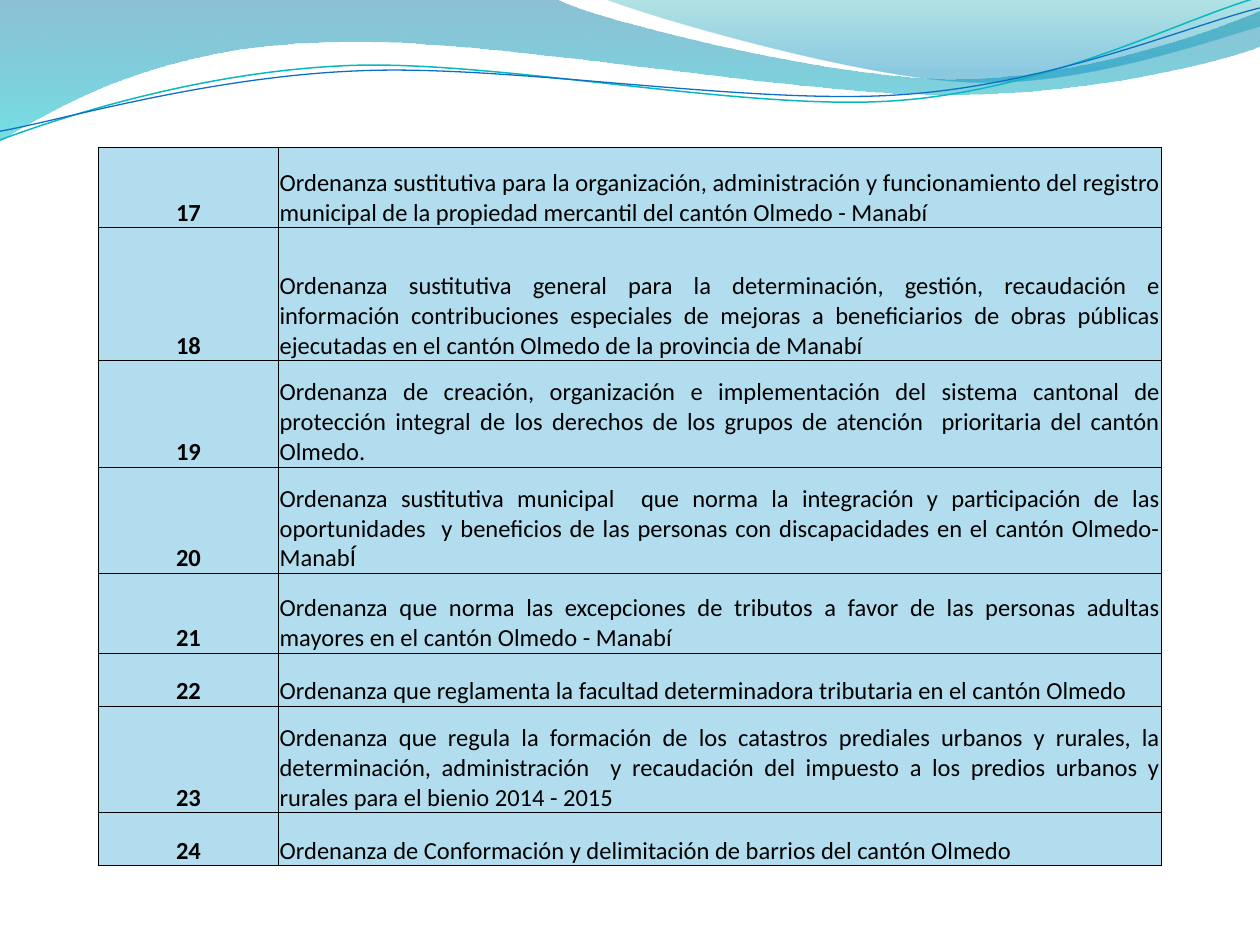
from lxml import etree
from pptx import Presentation
from pptx.dml.color import RGBColor
from pptx.enum import text
from pptx.oxml.ns import qn
from pptx.util import Pt

BLACK = RGBColor(0, 0, 0)
CELL_BLUE = RGBColor(0xB2, 0xDD, 0xEE)
DEEP_BLUE = RGBColor(0x00, 0x74, 0xA1)
CYAN = RGBColor(0x00, 0xC6, 0xCF)
TEAL = RGBColor(0x00, 0xA1, 0xA9)
SKY = RGBColor(0x00, 0x8B, 0xBF)
LINE_TEAL = RGBColor(0x0A, 0xB8, 0xBF)
LINE_BLUE = RGBColor(0x0F, 0x6F, 0xC6)

# Outlines: a start point, then segments of one point (line) or three (Bézier curve).
# Gradient stops: position, colour, opacity in percent.
WAVES = [
    ((0, 0), [
        [(317, -1)],
        [(343, 12), (478, 45), (546, 45)],
        [(614, 45), (690, 19), (720, 6)],
        [(721, 26)],
        [(708, 32), (626, 55), (537, 54)],
        [(447, 54), (275, 20), (185, 24)],
        [(93, 26), (33, 60), (-1, 81)],
        [(0, 0)],
    ], [(0, DEEP_BLUE, 45), (1, CYAN, 55)]),
    ((345, -1), [
        [(366, 8), (491, 45), (554, 47)],
        [(617, 50), (692, 23), (720, 15)],
        [(720, 0)],
        [(345, -1)],
    ], [(0, TEAL, 30), (0.8, SKY, 45)]),
]
STROKE_ROTATION = 357.3
STROKES = [
    ((-1.4, 63), [
        [(34.2, 51.7), (114.3, 29.4), (199.4, 29.9)],
        [(284.4, 30.5), (425.8, 67.2), (512, 64.7)],
        [(599.3, 62.3), (676, 25.9), (720.6, 15.5)],
    ], LINE_TEAL, 0.85),
    ((-1.1, 58), [
        [(33.2, 53.6), (118.2, 32.6), (204.3, 33.2)],
        [(290.4, 33.2), (429.1, 63.8), (515.3, 61.4)],
        [(601.4, 59.4), (679, 30), (721.4, 21.5)],
    ], LINE_BLUE, 0.75),
]

FIRST_NUMBER = 17
ROW_UNIT = 15.2
# Row height in units, text
ORDINANCES = [
    (3, "Ordenanza sustitutiva para la organización, administración y funcionamiento del "
        "registro municipal de la propiedad mercantil del cantón Olmedo - Manabí"),
    (5, "Ordenanza sustitutiva general para la determinación, gestión, recaudación e "
        "información contribuciones especiales de mejoras a beneficiarios de obras públicas "
        "ejecutadas en el cantón Olmedo de la provincia de Manabí"),
    (4, "Ordenanza de creación, organización e implementación del sistema cantonal de "
        "protección integral de los derechos de los grupos de atención  prioritaria del "
        "cantón Olmedo."),
    (4, "Ordenanza sustitutiva municipal  que norma la integración y participación de las "
        "oportunidades  y beneficios de las personas con discapacidades en el cantón "
        "Olmedo-ManabÍ"),
    (3, "Ordenanza que norma las excepciones de tributos a favor de las personas adultas "
        "mayores en el cantón Olmedo - Manabí"),
    (2, "Ordenanza que reglamenta la facultad determinadora tributaria en el cantón Olmedo"),
    (4, "Ordenanza que regula la formación de los catastros prediales urbanos y rurales, la "
        "determinación, administración  y recaudación del impuesto a los predios urbanos y "
        "rurales para el bienio 2014 - 2015"),
    (2, "Ordenanza de Conformación y delimitación de barrios del cantón Olmedo"),
]


def add_outline(slide, left, top, start, segments, close):
    """Draw all points as lines, then join each group of three into one Bézier curve."""
    def place(point):
        return Pt(left + point[0]), Pt(top + point[1])

    builder = slide.shapes.build_freeform(*place(start))
    builder.add_line_segments([place(pt) for seg in segments for pt in seg], close=close)
    sp = builder.convert_to_shape()
    sp.shadow.inherit = False
    lines = iter(list(sp.element.iter(qn("a:lnTo"))))
    for segment in segments:
        first, *others = [next(lines) for _ in segment]
        if others:
            first.tag = qn("a:cubicBezTo")
        for line in others:
            first.append(line[0])
            line.getparent().remove(line)
    return sp


def add_header(slide, left, top):
    for start, segments, stops in WAVES:
        sp = add_outline(slide, left, top, start, segments, close=True)
        sp.line.fill.background()
        sp.fill.gradient()
        sp.fill.gradient_angle = 270
        for stop, (position, color, _) in zip(sp.fill.gradient_stops, stops):
            stop.position = position
            stop.color.rgb = color
        for color_el, (_, _, opacity) in zip(sp.element.spPr.iter(qn("a:srgbClr")), stops):
            etree.SubElement(color_el, qn("a:alpha"), val=str(opacity * 1000))
    for start, segments, color, width in STROKES:
        sp = add_outline(slide, left, top, start, segments, close=False)
        sp.rotation = STROKE_ROTATION
        sp.fill.background()
        sp.line.color.rgb = color
        sp.line.width = Pt(width)


def add_borders(cell, color, width):
    tcPr = cell._tc.get_or_add_tcPr()
    for i, side in enumerate(("lnL", "lnR", "lnT", "lnB")):
        ln = etree.Element(qn(f"a:{side}"), w=str(Pt(width)))
        fill = etree.SubElement(ln, qn("a:solidFill"))
        etree.SubElement(fill, qn("a:srgbClr"), val=str(color))
        tcPr.insert(i, ln)


def write_cell(cell, content, align, bold=False, size=14, font="Calibri", color=BLACK):
    cell.fill.solid()
    cell.fill.fore_color.rgb = CELL_BLUE
    cell.vertical_anchor = text.MSO_ANCHOR.BOTTOM
    cell.margin_left = cell.margin_right = cell.margin_top = Pt(0.6)
    cell.margin_bottom = 0
    p = cell.text_frame.paragraphs[0]
    p.alignment = align
    r = p.add_run()
    r.text = content
    r.font.name, r.font.size, r.font.bold = font, Pt(size), bold
    r.font.color.rgb = color
    add_borders(cell, BLACK, 0.5)


def add_ordinances(slide, left, top, width, number_width=103):
    height = ROW_UNIT * sum(units for units, _ in ORDINANCES)
    table = slide.shapes.add_table(len(ORDINANCES), 2, Pt(left), Pt(top),
                                   Pt(width), Pt(height)).table
    table.first_row = table.horz_banding = False
    table.columns[0].width = Pt(number_width)
    table.columns[1].width = Pt(width - number_width)
    for i, (units, title) in enumerate(ORDINANCES):
        table.rows[i].height = Pt(units * ROW_UNIT)
        write_cell(table.cell(i, 0), str(FIRST_NUMBER + i), text.PP_ALIGN.CENTER, bold=True)
        write_cell(table.cell(i, 1), title, text.PP_ALIGN.JUSTIFY)


def main():
    prs = Presentation()
    prs.slide_width, prs.slide_height = Pt(720), Pt(540)
    slide = prs.slides.add_slide(prs.slide_layouts[6])
    add_header(slide, 0, 0)
    add_ordinances(slide, 56.2, 84.5, 607.6)
    prs.save("out.pptx")


if __name__ == "__main__":
    main()
